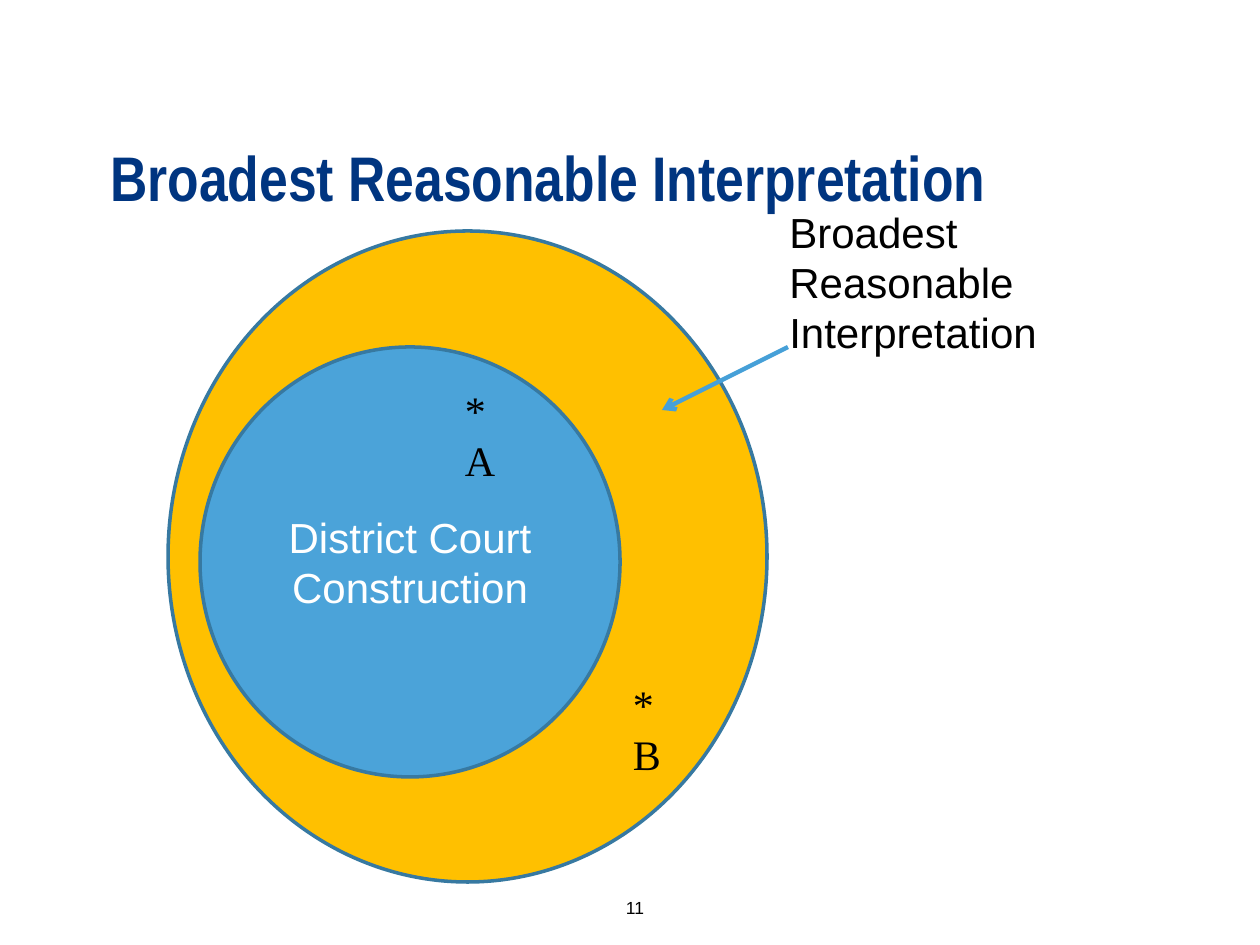
from lxml.etree import SubElement
from pptx import Presentation
from pptx.dml.color import RGBColor
from pptx.enum.shapes import MSO_CONNECTOR, MSO_SHAPE
from pptx.enum.text import MSO_ANCHOR as Anchor, PP_ALIGN as Align
from pptx.oxml.ns import qn
from pptx.util import Emu, Pt

EMU_PER_PX = 914400 / 126
NAVY = RGBColor(0x00, 0x35, 0x80)
GOLD = RGBColor(0xFF, 0xC0, 0x00)
BLUE = RGBColor(0x4B, 0xA3, 0xD9)
ARROW_BLUE = RGBColor(0x46, 0xA0, 0xD8)
OUTLINE = RGBColor(0x37, 0x79, 0xA1)
BLACK = RGBColor(0x00, 0x00, 0x00)
WHITE = RGBColor(0xFF, 0xFF, 0xFF)

TITLE = {"name": "Arial Narrow", "size": Pt(36), "bold": True}
LABEL = {"name": "Arial", "size": Pt(24)}
POINT = {"name": "Times New Roman", "size": Pt(24)}
NUMBER = {"name": "Arial", "size": Pt(10)}


def px(*lengths):
    """Turn pixel lengths into EMU."""
    return [Emu(round(length * EMU_PER_PX)) for length in lengths]


def write(shape, lines, style, color, anchor=Anchor.TOP, align=Align.LEFT, spacing=None):
    """Write one formatted paragraph per line into a shape."""
    frame = shape.text_frame
    frame.word_wrap = True
    frame.vertical_anchor = anchor
    frame.text = "\n".join(lines)
    for paragraph in frame.paragraphs:
        paragraph.alignment = align
        paragraph.line_spacing = spacing
        for name, value in style.items():
            setattr(paragraph.font, name, value)
        paragraph.font.color.rgb = color


def add_text(slide, box, lines, style, color=BLACK, **layout):
    """Add a wrapping text box."""
    shape = slide.shapes.add_textbox(*px(*box))
    write(shape, lines, style, color, **layout)
    return shape


def add_ellipse(slide, box, color):
    """Add an outlined ellipse."""
    shape = slide.shapes.add_shape(MSO_SHAPE.OVAL, *px(*box))
    shape.shadow.inherit = False
    shape.fill.solid()
    shape.fill.fore_color.rgb = color
    shape.line.color.rgb = OUTLINE
    shape.line.width = Pt(2)
    return shape


def add_arrow(slide, start, end):
    """Add a straight arrow with an open head at its end."""
    arrow = slide.shapes.add_connector(MSO_CONNECTOR.STRAIGHT, *px(*start, *end))
    arrow.line.color.rgb = ARROW_BLUE
    arrow.line.width = Pt(2.5)
    properties = arrow.element.spPr
    SubElement(properties.find(qn("a:ln")), qn("a:tailEnd"), type="arrow")
    SubElement(properties, qn("a:effectLst"))


def add_point(slide, left, top, letter):
    """Add a starred point with its letter below."""
    shape = add_text(slide, (left, top, 116, 115), ["*", letter], POINT)
    shape.text_frame.margin_left = px(34)[0]


def main():
    """Build the slide and save it."""
    presentation = Presentation()
    presentation.slide_width, presentation.slide_height = px(1260, 945)
    slide = presentation.slides.add_slide(presentation.slide_layouts[6])

    add_ellipse(slide, (168, 231, 599, 651), GOLD)
    add_text(slide, (98, 53, 1050, 168), ["Broadest Reasonable Interpretation"],
             TITLE, NAVY, anchor=Anchor.BOTTOM, spacing=0.9)
    add_text(slide, (504, 861, 262, 63), ["11"], NUMBER,
             anchor=Anchor.BOTTOM, align=Align.CENTER)
    district_court = add_ellipse(slide, (200, 347, 420, 430), BLUE)
    write(district_court, ["District Court Construction"], LABEL, WHITE,
          anchor=Anchor.MIDDLE, align=Align.CENTER)
    add_text(slide, (777, 200, 315, 165), ["Broadest Reasonable Interpretation"], LABEL)
    add_arrow(slide, (788, 347), (662, 410))
    add_point(slide, 431, 378, "A")
    add_point(slide, 599, 672, "B")

    presentation.save("out.pptx")


if __name__ == "__main__":
    main()
